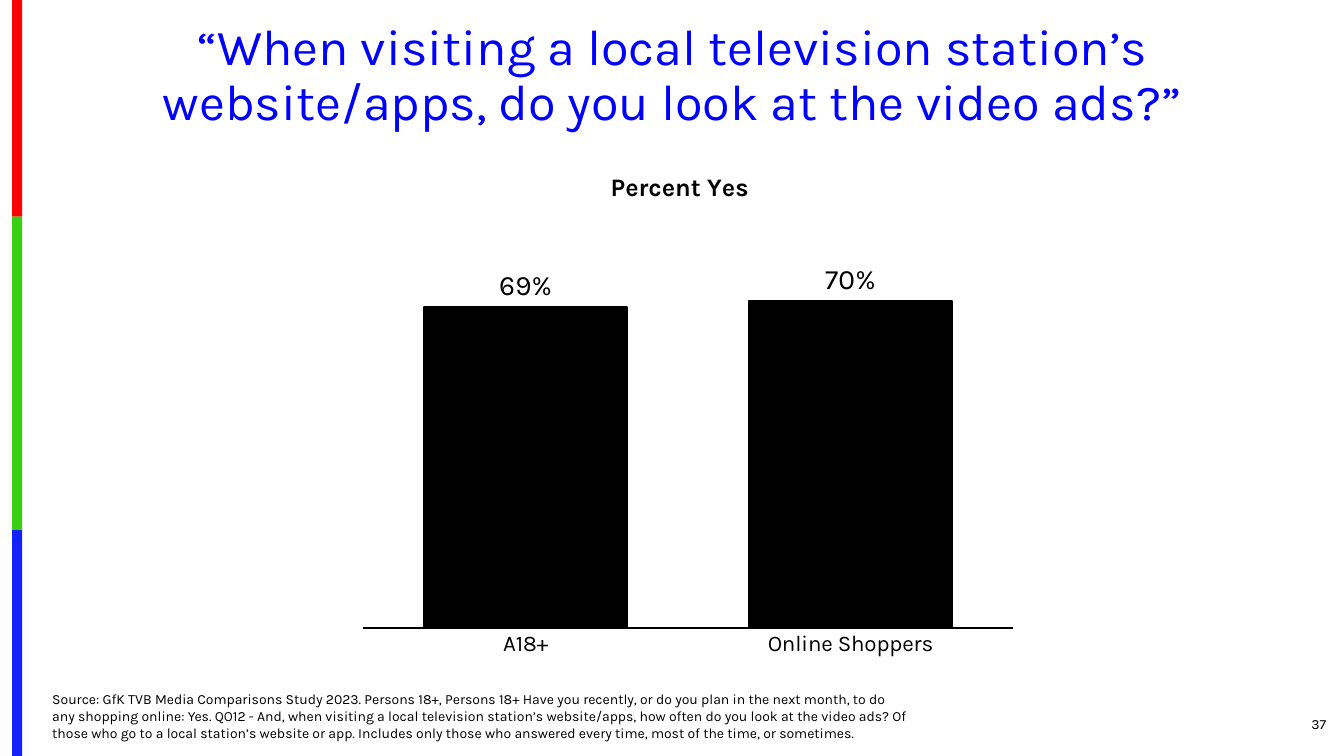
from dataclasses import dataclass

from lxml import etree
from pptx import Presentation
from pptx import util as u
from pptx.chart import data
from pptx.dml import color
from pptx.enum import chart as charts, shapes, text
from pptx.oxml import ns

TITLE = "“When visiting a local television station’s website/apps, do you look at the video ads?”"
CHART_TITLE = "Percent Yes"
ANSWERS = {"A18+": 0.69, "Online Shoppers": 0.7}
PAGE = "37"
SOURCE = (
    "Source: GfK TVB Media Comparisons Study 2023. Persons 18+, Persons 18+ Have you recently, "
    "or do you plan in the next month, to do any shopping online: Yes. QO12 - And, when visiting "
    "a local television station’s website/apps, how often do you look at the video ads? Of those "
    "who go to a local station’s website or app. Includes only those who answered every time, "
    "most of the time, or sometimes."
)
STRIPE = [("FE0000", 2.15), ("36CF12", 3.11), ("1322FE", 2.24)]


@dataclass(frozen=True)
class Theme:
    font: str = "Karla"
    title: str = "0000FF"
    ink: str = "000000"
    title_size: int = 36
    value_size: int = 20
    heading_size: int = 18
    category_size: int = 16
    small_size: int = 10
    line_width: float = 1.5


THEME = Theme()


def rgb(value):
    return color.RGBColor.from_string(value)


def style(font, size, ink=THEME.ink, bold=False):
    font.name = THEME.font
    font.size = u.Pt(size)
    font.bold = bold
    font.color.rgb = rgb(ink)


def draw_line(line):
    line.color.rgb = rgb(THEME.ink)
    line.width = u.Pt(THEME.line_width)


def place(shape, box):
    shape.left, shape.top, shape.width, shape.height = map(u.Inches, box)


def write(frame, content, size, ink=THEME.ink, bold=False, align=text.PP_ALIGN.LEFT,
          anchor=text.MSO_ANCHOR.TOP, spacing=None):
    frame.word_wrap = True
    frame.vertical_anchor = anchor
    paragraph = frame.paragraphs[0]
    paragraph.alignment = align
    paragraph.line_spacing = spacing
    run = paragraph.add_run()
    run.text = content
    style(run.font, size, ink, bold)


def set_layout(parent, **settings):
    layout = parent.find(ns.qn("c:layout"))
    if layout is None:
        layout = etree.Element(ns.qn("c:layout"))
        parent.insert(0, layout)
    manual = etree.SubElement(layout, ns.qn("c:manualLayout"))
    for name, value in settings.items():
        etree.SubElement(manual, ns.qn(f"c:{name}")).set("val", str(value))


def add_stripe(slide):
    top = 0
    for fill, height in STRIPE:
        shape = slide.shapes.add_shape(
            shapes.MSO_SHAPE.RECTANGLE, *map(u.Inches, (0.12, top, 0.1, height)))
        shape.shadow.inherit = False
        shape.fill.solid()
        shape.fill.fore_color.rgb = rgb(fill)
        shape.line.fill.background()
        top += height


def add_answer_chart(slide, box):
    chart_data = data.CategoryChartData(number_format="0%")
    chart_data.categories = list(ANSWERS)
    chart_data.add_series("Series 1", list(ANSWERS.values()))
    chart = slide.shapes.add_chart(
        charts.XL_CHART_TYPE.COLUMN_CLUSTERED, *map(u.Inches, box), chart_data).chart
    chart.has_legend = False
    style(chart.font, THEME.small_size)

    chart.has_title = True
    set_layout(chart.chart_title._element, xMode="edge", yMode="edge", x=0.39, y=0.05)
    run = chart.chart_title.text_frame.paragraphs[0].add_run()
    run.text = CHART_TITLE
    style(run.font, THEME.heading_size, bold=True)
    set_layout(chart._chartSpace.chart.plotArea, layoutTarget="inner", xMode="edge",
               yMode="edge", x=0.05, y=0.17, w=0.91, h=0.68)

    values = chart.value_axis
    values.minimum_scale, values.maximum_scale = 0.2, 0.8
    values.has_major_gridlines = False
    values.visible = False
    categories = chart.category_axis
    categories.major_tick_mark = charts.XL_TICK_MARK.NONE
    style(categories.tick_labels.font, THEME.category_size)
    draw_line(categories.format.line)

    plot = chart.plots[0]
    plot.gap_width = 60
    plot.vary_by_categories = False
    series = plot.series[0]
    series.format.fill.solid()
    series.format.fill.fore_color.rgb = rgb(THEME.ink)
    draw_line(series.format.line)
    labels = series.data_labels
    labels.show_value = True
    labels.number_format = "0%"
    labels.number_format_is_linked = False
    labels.position = charts.XL_LABEL_POSITION.OUTSIDE_END
    style(labels.font, THEME.value_size)


def main():
    presentation = Presentation()
    presentation.slide_width = u.Inches(13.33)
    presentation.slide_height = u.Inches(7.5)
    slide = presentation.slides.add_slide(presentation.slide_layouts[5])
    add_stripe(slide)

    title = slide.shapes.title
    place(title, (0.46, 0.17, 12.42, 1.19))
    write(title.text_frame, TITLE, THEME.title_size, ink=THEME.title,
          align=text.PP_ALIGN.CENTER, spacing=0.9)

    add_answer_chart(slide, (3.25, 1.36, 7.08, 5.73))

    page = slide.shapes.add_textbox(*map(u.Inches, (12.17, 6.98, 1.08, 0.4)))
    write(page.text_frame, PAGE, THEME.small_size, align=text.PP_ALIGN.RIGHT,
          anchor=text.MSO_ANCHOR.MIDDLE)
    source = slide.shapes.add_textbox(*map(u.Inches, (0.42, 6.79, 8.67, 0.61)))
    write(source.text_frame, SOURCE, THEME.small_size, anchor=text.MSO_ANCHOR.BOTTOM)

    presentation.save("out.pptx")


if __name__ == "__main__":
    main()
